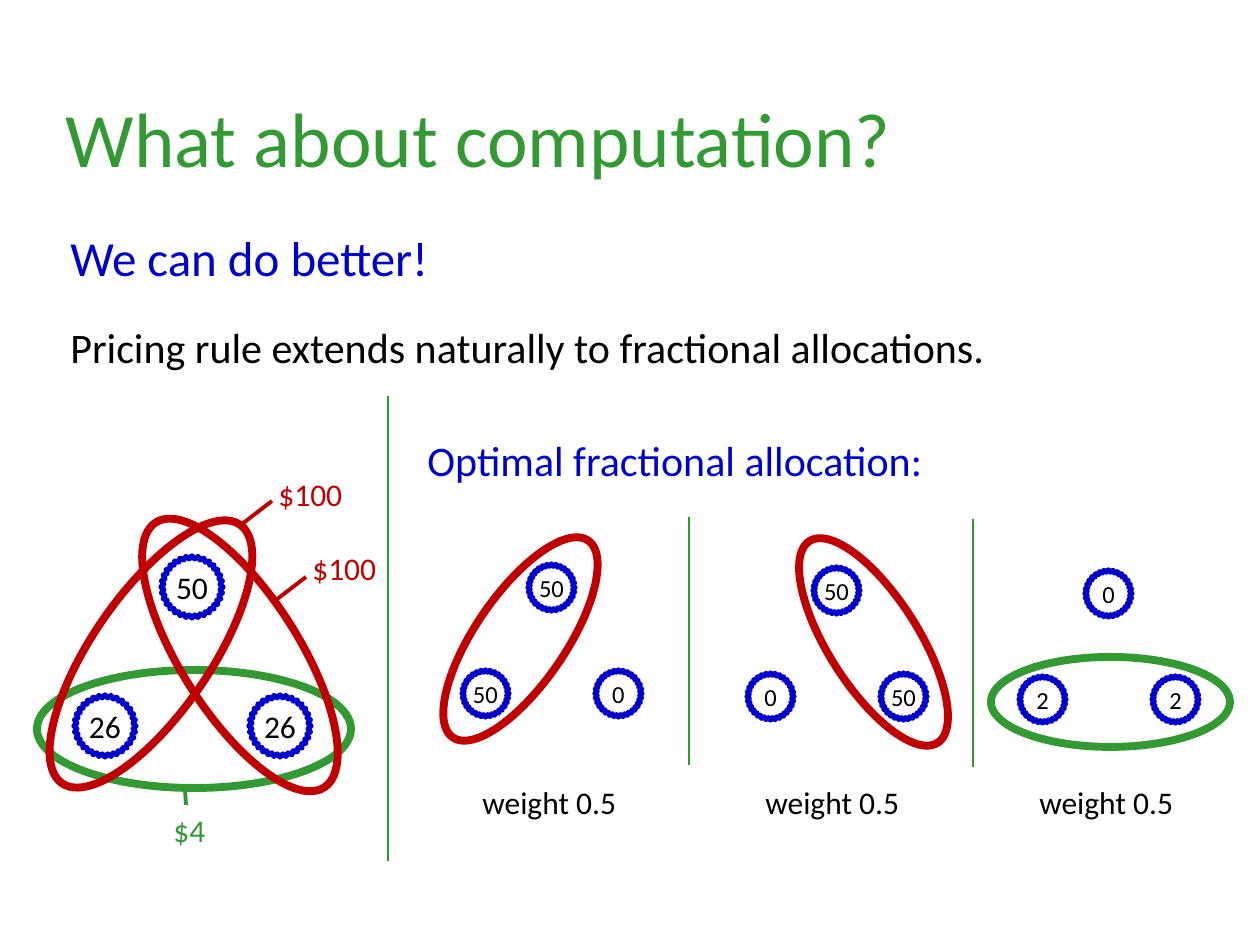
"""Build the slide on fractional allocations and bundle prices."""
from dataclasses import dataclass
from typing import Any

from lxml.etree import SubElement
from pptx import Presentation
from pptx.dml.color import RGBColor
from pptx.enum.shapes import MSO_CONNECTOR, MSO_SHAPE
from pptx.enum.text import MSO_ANCHOR, MSO_AUTO_SIZE, PP_ALIGN
from pptx.oxml.ns import qn
from pptx.util import Emu, Pt

EMU_PER_PX = 914400 / 126


@dataclass(frozen=True)
class Theme:
    """Colours, type sizes and line widths of the slide."""
    green: str = "339933"
    divider: str = "2F982F"
    blue: str = "0000CC"
    red: str = "C00000"
    black: str = "000000"
    white: str = "FFFFFF"
    font: str = "Calibri"
    title: int = 44
    lead: int = 28
    body: int = 24
    label: int = 18
    small: int = 14
    ring: float = 4.5
    node: float = 3
    pointer: float = 2.25
    hairline: float = 0.75


THEME = Theme()


@dataclass(frozen=True)
class Box:
    """A frame in px."""
    left: int
    top: int
    width: int
    height: int


@dataclass(frozen=True)
class Ring:
    """An ellipse around a pair of nodes, placed from the diagram's corner."""
    left: int
    top: int
    rotation: float
    color: str


@dataclass(frozen=True)
class Diagram:
    """Three nodes in a triangle with the rings of the chosen bundles."""
    left: int
    top: int
    values: tuple[str, str, str]
    rings: tuple[Ring, ...]
    scale: float = 0.76
    size: int = THEME.small


@dataclass(frozen=True)
class Line:
    """A straight line in px."""
    begin: tuple[int, int]
    end: tuple[int, int]
    color: str = THEME.divider
    width: float = THEME.hairline


@dataclass(frozen=True)
class Label:
    """A single-paragraph text."""
    text: str
    box: Box
    color: str
    size: int = THEME.label
    wrap: bool = True


NODE_SIZE = 62
NODE_OFFSETS = ((0, 139), (87, 0), (175, 139))
RING_SIZE = (314, 118)
BASE = Ring(-37, 114, 0, THEME.green)
RIGHT_SIDE = Ring(9, 40, 57.6, THEME.red)
LEFT_SIDE = Ring(-80, 39, 304.5, THEME.red)

DIAGRAMS = (
    Diagram(74, 556, ("26", "50", "26"), (BASE, RIGHT_SIDE, LEFT_SIDE), 1, THEME.label),
    Diagram(462, 564, ("50", "50", "0"), (LEFT_SIDE,)),
    Diagram(747, 567, ("0", "50", "50"), (RIGHT_SIDE,)),
    Diagram(1019, 570, ("2", "0", "2"), (BASE,)),
)
LINES = (
    Line((388, 396), (388, 861)),
    Line((689, 517), (689, 765)),
    Line((973, 519), (973, 767)),
    Line((306, 577), (276, 600), THEME.red, THEME.pointer),
    Line((272, 501), (242, 524), THEME.red, THEME.pointer),
    Line((185, 789), (186, 805), THEME.green, THEME.pointer),
)
LABELS = (
    Label("$100", Box(300, 543, 89, 50), THEME.red),
    Label("$100", Box(266, 469, 105, 50), THEME.red),
    Label("$4", Box(161, 805, 81, 50), THEME.green),
    Label("Optimal fractional allocation:", Box(415, 428, 672, 64), THEME.blue, THEME.body),
    *(Label("weight 0.5", Box(left, 777, 165, 50), THEME.black, wrap=False)
      for left in (470, 753, 1027)),
)


def px(value: float) -> Emu:
    """Turn px into EMU."""
    return Emu(round(value * EMU_PER_PX))


def apply(target: Any, formats: dict[str, Any]) -> None:
    """Set each format value on the target."""
    for name, value in formats.items():
        setattr(target, name, value)


def place(box: Box) -> tuple[Emu, ...]:
    """Give a box's position and size in EMU."""
    return px(box.left), px(box.top), px(box.width), px(box.height)


def write(paragraph: Any, text: str, size: int, color: str) -> None:
    """Add one formatted run to a paragraph."""
    run = paragraph.add_run()
    run.text = text
    apply(run.font, {"name": THEME.font, "size": Pt(size)})
    run.font.color.rgb = RGBColor.from_string(color)


def draw_outline(shape: Any, color: str, width: float) -> None:
    """Set the line of a shape or connector."""
    shape.line.color.rgb = RGBColor.from_string(color)
    shape.line.width = Pt(width)


def draw_node(shapes: Any, box: Box, value: str, size: int) -> None:
    """Draw a white scalloped node with its value."""
    star = shapes.add_shape(MSO_SHAPE.STAR_32_POINT, *place(box))
    star.shadow.inherit = False
    star.adjustments[0] = 0.456
    star.fill.solid()
    star.fill.fore_color.rgb = RGBColor.from_string(THEME.white)
    draw_outline(star, THEME.blue, THEME.node)
    apply(star.text_frame, {"margin_left": 0, "margin_right": 0,
                            "vertical_anchor": MSO_ANCHOR.MIDDLE})
    paragraph = star.text_frame.paragraphs[0]
    paragraph.alignment = PP_ALIGN.CENTER
    write(paragraph, value, size, THEME.black)


def draw_diagram(slide: Any, diagram: Diagram) -> None:
    """Draw the nodes and rings of a diagram as one group."""
    shapes = slide.shapes.add_group_shape().shapes

    def scaled(left: int, top: int, width: int, height: int) -> Box:
        left, top, width, height = (round(v * diagram.scale) for v in (left, top, width, height))
        return Box(diagram.left + left, diagram.top + top, width, height)

    for offset, value in zip(NODE_OFFSETS, diagram.values):
        draw_node(shapes, scaled(*offset, NODE_SIZE, NODE_SIZE), value, diagram.size)
    for ring in diagram.rings:
        ellipse = shapes.add_shape(MSO_SHAPE.OVAL, *place(scaled(ring.left, ring.top, *RING_SIZE)))
        ellipse.shadow.inherit = False
        ellipse.rotation = ring.rotation
        ellipse.fill.background()
        draw_outline(ellipse, ring.color, THEME.ring)


def draw_line(slide: Any, line: Line) -> None:
    """Draw a straight connector without a shadow."""
    ends = (px(value) for value in (*line.begin, *line.end))
    connector = slide.shapes.add_connector(MSO_CONNECTOR.STRAIGHT, *ends)
    draw_outline(connector, line.color, line.width)
    SubElement(connector._element.spPr, qn("a:effectLst"))


def draw_label(slide: Any, label: Label) -> None:
    """Draw a text box with one paragraph."""
    frame = slide.shapes.add_textbox(*place(label.box)).text_frame
    frame.word_wrap = label.wrap
    write(frame.paragraphs[0], label.text, label.size, label.color)


def draw_heading(slide: Any) -> None:
    """Write the title and the two statements below it."""
    title = slide.shapes.title
    apply(title, dict(zip(("left", "top", "width", "height"), place(Box(53, 84, 861, 106)))))
    apply(title.text_frame, {"word_wrap": False, "vertical_anchor": MSO_ANCHOR.TOP,
                             "auto_size": MSO_AUTO_SIZE.SHAPE_TO_FIT_TEXT})
    paragraph = title.text_frame.paragraphs[0]
    paragraph.alignment = PP_ALIGN.LEFT
    write(paragraph, "What about computation?", THEME.title, THEME.green)
    frame = slide.shapes.add_textbox(*place(Box(58, 221, 1160, 175))).text_frame
    frame.word_wrap = True
    write(frame.paragraphs[0], "We can do better!", THEME.lead, THEME.blue)
    paragraph = frame.add_paragraph()
    paragraph.space_before = Pt(20)
    write(paragraph, "Pricing rule extends naturally to fractional allocations.",
          THEME.body, THEME.black)


def main() -> None:
    """Build and save the presentation."""
    presentation = Presentation()
    apply(presentation, {"slide_width": px(1260), "slide_height": px(945)})
    slide = presentation.slides.add_slide(presentation.slide_layouts[5])
    draw_heading(slide)
    for draw, items in ((draw_diagram, DIAGRAMS), (draw_line, LINES), (draw_label, LABELS)):
        for item in items:
            draw(slide, item)
    presentation.save("out.pptx")


if __name__ == "__main__":
    main()
